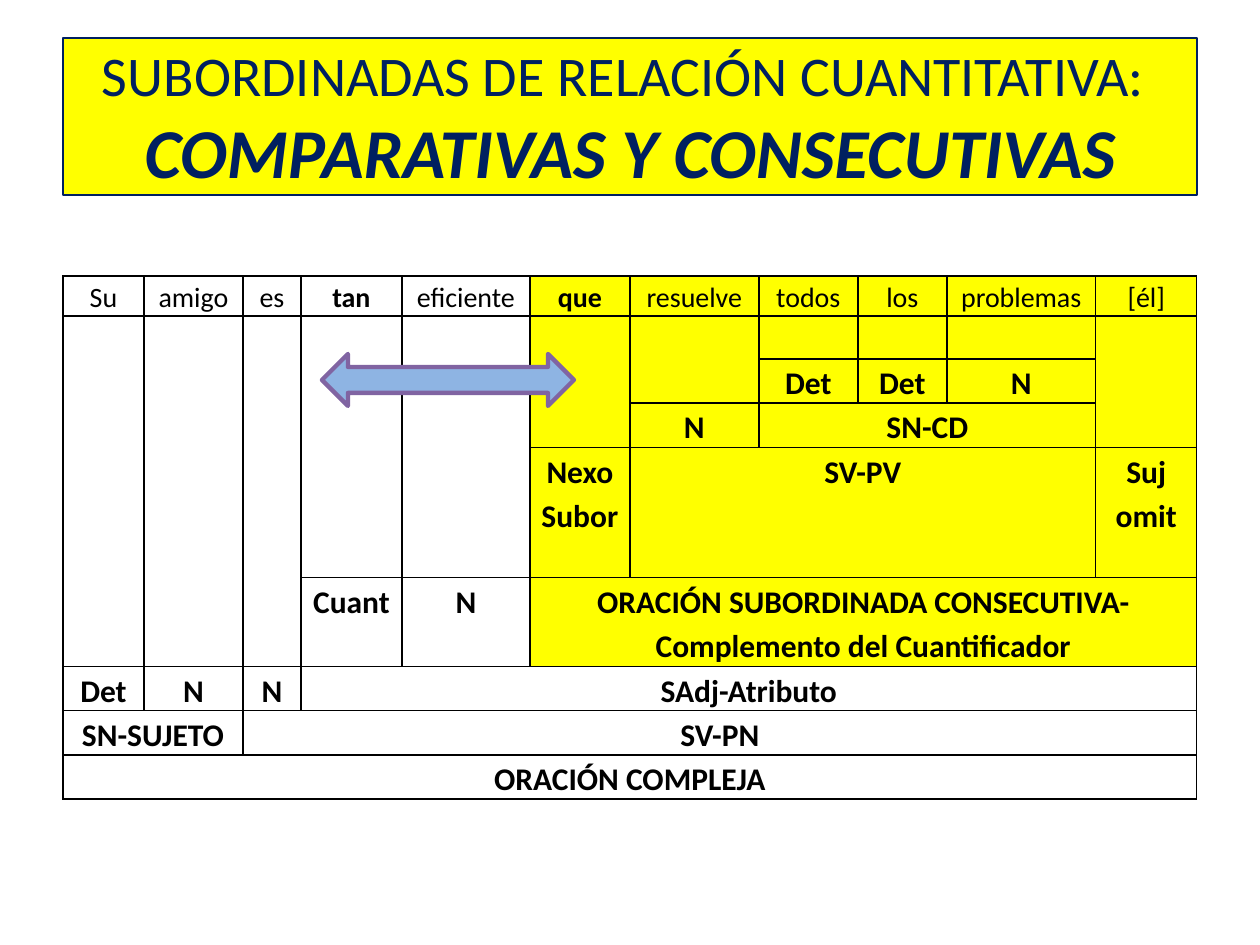
import pptx
import pptx.dml.color
import pptx.enum.shapes
import pptx.enum.text
import pptx.oxml
import pptx.oxml.ns
import pptx.util

PX = 914400 / 126
FONT = "Calibri"
YELLOW, NAVY, BLACK = "FFFF00", "002060", "000000"
CENTER = pptx.enum.text.PP_ALIGN.CENTER

COLUMNS = [81, 99, 58, 101, 128, 100, 129, 99, 89, 149, 101]
ROWS = [40, 43, 44, 44, 130, 89, 44, 44, 44]
WORDS = ["Su", "amigo", "es", "tan", "eficiente", "que", "resuelve",
         "todos", "los", "problemas", "[él]"]
LINK_WORDS = ("tan", "que")
# row, column, rows spanned, columns spanned, text
ANALYSIS = [
    (1, 0, 5, 1, ""), (1, 1, 5, 1, ""), (1, 2, 5, 1, ""),
    (1, 3, 4, 1, ""), (1, 4, 4, 1, ""), (1, 5, 3, 1, ""),
    (1, 6, 2, 1, ""), (1, 10, 3, 1, ""),
    (2, 7, 1, 1, "Det"), (2, 8, 1, 1, "Det"), (2, 9, 1, 1, "N"),
    (3, 6, 1, 1, "N"), (3, 7, 1, 3, "SN-CD"),
    (4, 5, 1, 1, "Nexo Subor"), (4, 6, 1, 4, "SV-PV"), (4, 10, 1, 1, "Suj omit"),
    (5, 3, 1, 1, "Cuant"), (5, 4, 1, 1, "N"),
    (5, 5, 1, 6, "ORACIÓN SUBORDINADA CONSECUTIVA-\nComplemento del Cuantificador"),
    (6, 0, 1, 1, "Det"), (6, 1, 1, 1, "N"), (6, 2, 1, 1, "N"),
    (6, 3, 1, 8, "SAdj-Atributo"),
    (7, 0, 1, 2, "SN-SUJETO"), (7, 2, 1, 9, "SV-PN"),
    (8, 0, 1, 11, "ORACIÓN COMPLEJA"),
]


def px(n):
    return pptx.util.Emu(round(n * PX))


def rgb(color):
    return pptx.dml.color.RGBColor.from_string(color)


def paint(shape, fill, line, width):
    shape.fill.solid()
    shape.fill.fore_color.rgb = rgb(fill)
    shape.line.color.rgb = rgb(line)
    shape.line.width = pptx.util.Pt(width)
    shape.shadow.inherit = False


def add_title(s):
    title = s.shapes.title
    title.left, title.top, title.width, title.height = px(63), px(38), px(1134), px(157)
    paint(title, YELLOW, NAVY, 0.75)
    tf = title.text_frame
    tf.word_wrap = True
    tf.auto_size = pptx.enum.text.MSO_AUTO_SIZE.NONE
    tf.vertical_anchor = pptx.enum.text.MSO_ANCHOR.MIDDLE
    p = tf.paragraphs[0]
    p.alignment = CENTER
    p.font.name = FONT
    p.font.color.rgb = rgb(NAVY)
    r = p.add_run()
    r.text = "SUBORDINADAS DE RELACIÓN CUANTITATIVA: "
    r.font.size = pptx.util.Pt(32)
    p.add_line_break()
    r = p.add_run()
    r.text = "COMPARATIVAS Y CONSECUTIVAS"
    r.font.size = pptx.util.Pt(40)
    r.font.bold = r.font.italic = True


def set_borders(cell):
    tcPr = cell._tc.get_or_add_tcPr()
    for side in ("lnL", "lnR", "lnT", "lnB"):
        tcPr.append(pptx.oxml.parse_xml(
            f'<a:{side} {pptx.oxml.ns.nsdecls("a")} w="12700"><a:solidFill>'
            f'<a:srgbClr val="{BLACK}"/></a:solidFill></a:{side}>'))


def format_cell(cell, yellow):
    set_borders(cell)
    if yellow:
        cell.fill.solid()
        cell.fill.fore_color.rgb = rgb(YELLOW)
    else:
        cell.fill.background()
    cell.margin_left = cell.margin_right = px(8)
    cell.margin_top = cell.margin_bottom = 0


def write_cell(cell, text, size, bold):
    cell.text = text
    for p in cell.text_frame.paragraphs:
        p.alignment = CENTER
        p.line_spacing = 1.15
        p.font.name = FONT
        p.font.size = pptx.util.Pt(size)
        p.font.bold = bold
        p.font.color.rgb = rgb(BLACK)


def add_analysis_table(s):
    table = s.shapes.add_table(len(ROWS), len(COLUMNS), px(63), px(276),
                               px(sum(COLUMNS)), px(sum(ROWS))).table
    table.first_row = table.horz_banding = False
    for column, width in zip(table.columns, COLUMNS):
        column.width = px(width)
    for row, height in zip(table.rows, ROWS):
        row.height = px(height)
    for i in range(len(ROWS)):
        for j in range(len(COLUMNS)):
            format_cell(table.cell(i, j), yellow=i <= 5 <= j)
    for j, word in enumerate(WORDS):
        write_cell(table.cell(0, j), word, 16, word in LINK_WORDS)
    for i, j, rows, columns, text in ANALYSIS:
        cell = table.cell(i, j)
        if rows * columns > 1:
            cell.merge(table.cell(i + rows - 1, j + columns - 1))
        if text:
            write_cell(cell, text, 18, True)


def add_link_arrow(s):
    arrow = s.shapes.add_shape(pptx.enum.shapes.MSO_SHAPE.LEFT_RIGHT_ARROW,
                               px(322), px(354), px(252), px(52))
    paint(arrow, "8EB4E3", "8064A2", 2.5)


def main():
    prs = pptx.Presentation()
    prs.slide_width, prs.slide_height = px(1260), px(945)
    s = prs.slides.add_slide(prs.slide_layouts[5])
    add_title(s)
    add_analysis_table(s)
    add_link_arrow(s)
    prs.save("out.pptx")


if __name__ == "__main__":
    main()
